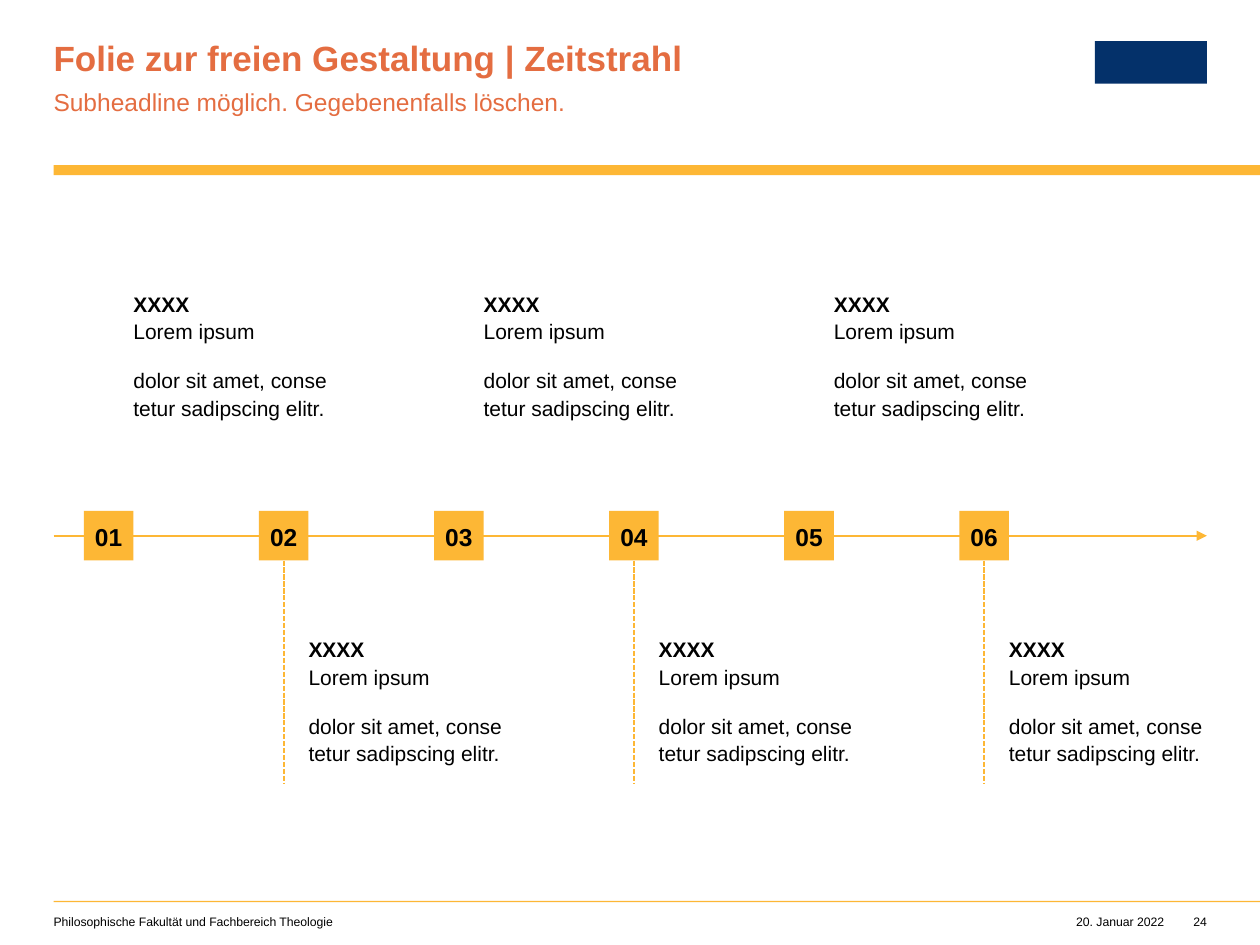
from dataclasses import dataclass

from lxml.etree import SubElement
from pptx import Presentation
from pptx.dml.color import RGBColor
from pptx.enum.dml import MSO_LINE
from pptx.enum.shapes import MSO_CONNECTOR, MSO_SHAPE
from pptx.enum.text import MSO_ANCHOR, PP_ALIGN
from pptx.oxml.ns import qn
from pptx.util import Cm, Pt

AMBER = RGBColor(0xFD, 0xB7, 0x35)
CORAL = RGBColor(0xE4, 0x6D, 0x41)
NAVY = RGBColor(0x04, 0x31, 0x6A)
BLACK = RGBColor(0, 0, 0)

LEFT = 1.08
RIGHT = 24.33
WIDE = 25.4
AXIS = 10.8
SIDE = 1.0
FIRST = 1.69
STEP = 3.53
HIGH = 5.82
LOW = 12.79
STEM = 4.5


@dataclass
class Box:
    x: float
    y: float
    w: float
    h: float


@dataclass
class Style:
    size: float
    color: RGBColor = BLACK
    bold: bool = False
    align: PP_ALIGN = PP_ALIGN.LEFT
    space: float = 1.0
    after: float = 0
    wrap: bool = True
    anchor: MSO_ANCHOR = MSO_ANCHOR.TOP


@dataclass
class Label:
    text: str
    box: Box
    style: Style


@dataclass
class Event:
    mark: str
    x: float
    below: bool


def assign(target, values: dict) -> None:
    for key, value in values.items():
        setattr(target, key, value)


def lengths(box: Box) -> list:
    return [Cm(n) for n in (box.x, box.y, box.w, box.h)]


def write(frame, texts: list, style: Style, lead: str = "") -> None:
    assign(frame, {
        "margin_left": 0, "margin_right": 0,
        "margin_top": 0, "margin_bottom": 0,
        "word_wrap": style.wrap, "vertical_anchor": style.anchor,
    })
    for n, text in enumerate(texts):
        para = frame.add_paragraph() if n else frame.paragraphs[0]
        assign(para, {
            "alignment": style.align, "line_spacing": style.space,
            "space_after": Pt(style.after),
        })
        lines = [(line, style.bold) for line in text.split("\n")]
        if lead and n == 0:
            lines.insert(0, (lead, True))
        for row, (line, bold) in enumerate(lines):
            if row:
                para.add_line_break()
            run = para.add_run()
            run.text = line
            assign(run.font, {"name": "Arial", "size": Pt(style.size), "bold": bold})
            run.font.color.rgb = style.color


def add_text(slide, texts: list, box: Box, style: Style, lead: str = "") -> None:
    write(slide.shapes.add_textbox(*lengths(box)).text_frame, texts, style, lead)


def add_block(slide, box: Box, color: RGBColor):
    shape = slide.shapes.add_shape(MSO_SHAPE.RECTANGLE, *lengths(box))
    shape.shadow.inherit = False
    shape.fill.solid()
    shape.fill.fore_color.rgb = color
    shape.line.fill.background()
    return shape


def add_line(slide, x1: float, y1: float, x2: float, y2: float):
    link = slide.shapes.add_connector(
        MSO_CONNECTOR.STRAIGHT, Cm(x1), Cm(y1), Cm(x2), Cm(y2))
    link.line.color.rgb = AMBER
    link.line.width = Pt(1)
    return link


def end_line(link, arrow: bool) -> None:
    if arrow:
        SubElement(link.line._get_or_add_ln(), qn("a:tailEnd"), type="triangle")
    SubElement(link._element.spPr, qn("a:effectLst"))


def add_event(slide, event: Event) -> None:
    block = add_block(slide, Box(event.x, AXIS - SIDE / 2, SIDE, SIDE), AMBER)
    write(block.text_frame, [event.mark], Style(
        14, bold=True, align=PP_ALIGN.CENTER, space=1.1, after=12,
        anchor=MSO_ANCHOR.MIDDLE))
    top = LOW if event.below else HIGH
    add_text(
        slide, ["Lorem ipsum", "dolor sit amet, conse\ntetur sadipscing elitr."],
        Box(event.x + SIDE, top, 3.94, 2.64),
        Style(12, space=1.1, after=12, wrap=False), lead="XXXX")
    if event.below:
        mid, foot = event.x + SIDE / 2, AXIS + SIDE / 2
        stem = add_line(slide, mid, foot, mid, foot + STEM)
        stem.line.dash_style = MSO_LINE.SQUARE_DOT
        end_line(stem, False)


def main() -> None:
    deck = Presentation()
    deck.slide_width, deck.slide_height = Cm(WIDE), Cm(19.05)
    slide = deck.slides.add_slide(deck.slide_layouts[6])

    add_block(slide, Box(LEFT, 3.33, WIDE - LEFT, 0.2), AMBER)
    add_block(slide, Box(LEFT, 18.16, WIDE - LEFT, 0.03), AMBER)
    add_block(slide, Box(22.07, 0.83, 2.26, 0.86), NAVY)

    small = Style(7)
    end = Style(7, align=PP_ALIGN.RIGHT, wrap=False)
    labels = [
        Label("Folie zur freien Gestaltung | Zeitstrahl",
              Box(LEFT, 0.83, 14.25, 0.76), Style(20, CORAL, bold=True, space=0.9)),
        Label("Subheadline möglich. Gegebenenfalls löschen.",
              Box(LEFT, 1.7, 14.25, 0.6), Style(14, CORAL, space=1.1, after=8)),
        Label("20. Januar 2022", Box(21.67, 18.44, 1.8, 0.3), end),
        Label("Philosophische Fakultät und Fachbereich Theologie",
              Box(LEFT, 18.44, 11.4, 0.3), small),
        Label("24", Box(23.83, 18.44, 0.5, 0.3), end),
    ]
    for label in labels:
        add_text(slide, [label.text], label.box, label.style)

    end_line(add_line(slide, LEFT, AXIS, RIGHT, AXIS), True)
    for n in range(6):
        add_event(slide, Event(f"{n + 1:02}", FIRST + n * STEP, n % 2 == 1))

    deck.save("out.pptx")


if __name__ == "__main__":
    main()
